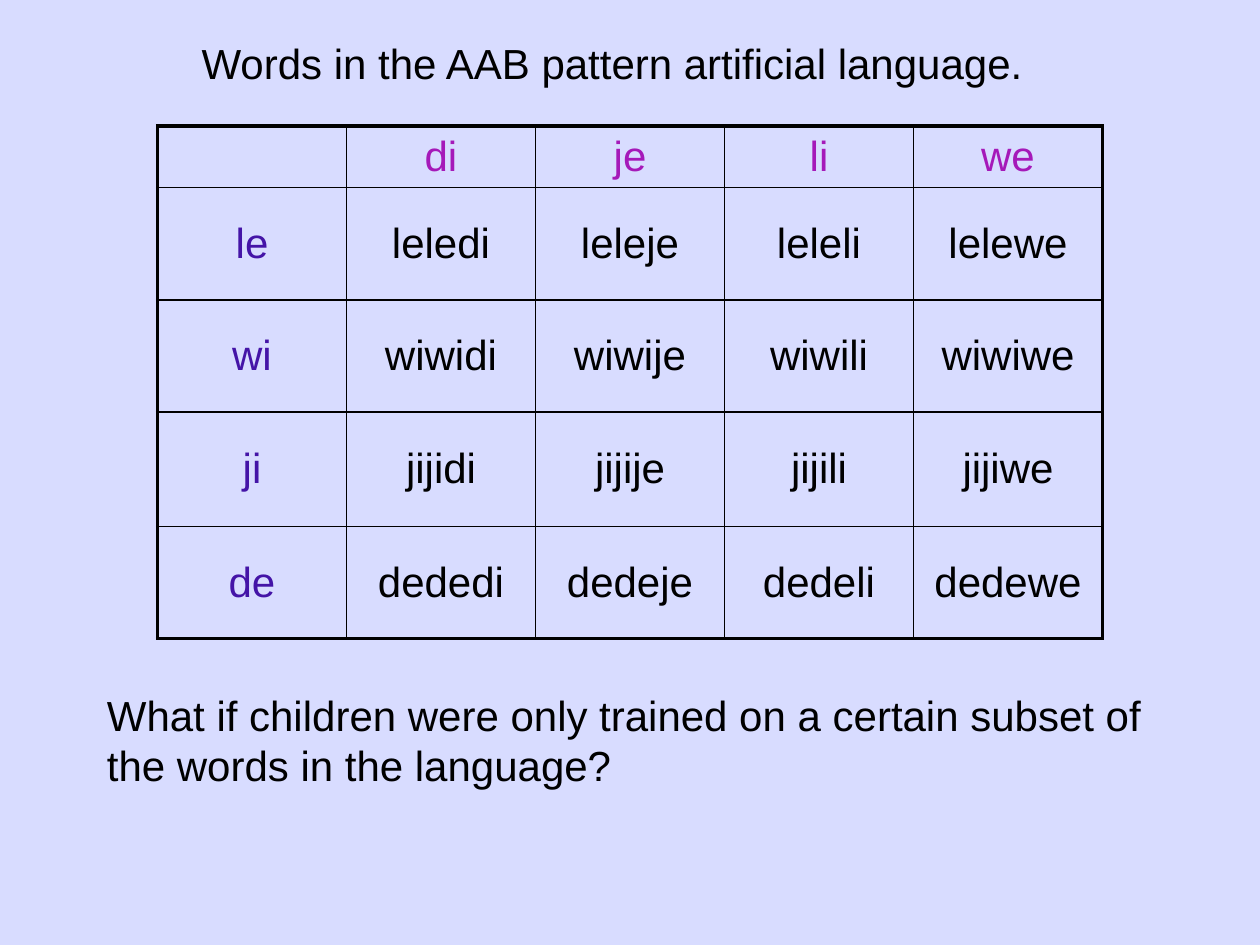
from lxml.etree import SubElement
from pptx import Presentation
from pptx.dml.color import RGBColor
from pptx.enum.text import MSO_ANCHOR as Anchor, MSO_AUTO_SIZE as AutoSize, PP_ALIGN as Align
from pptx.oxml.ns import qn
from pptx.util import Inches, Pt

TITLE = "Words in the AAB pattern artificial language."
QUESTION = ("What if children were only trained on a certain subset of "
            "the words in the language?")
A_SYLLABLES = ["le", "wi", "ji", "de"]
B_SYLLABLES = ["di", "je", "li", "we"]

BACKGROUND, BLACK, A_COLOR, B_COLOR = "D8DCFF", "000000", "4414A7", "A519B9"
COLUMN_WIDTH = 1.5
ROW_HEIGHTS = [0.49, 0.89, 0.89, 0.91, 0.89]
OUTER_LINE, INNER_LINE = 2.25, 1


def rgb(color):
    return RGBColor.from_string(color)


def style_text(frame, text, color=BLACK, align=Align.LEFT):
    para = frame.paragraphs[0]
    para.text = text
    para.alignment = align
    para.font.name = "Arial"
    para.font.size = Pt(24)
    para.font.color.rgb = rgb(color)


def place_text(box, text, left, top, width, height):
    box.left, box.top = Inches(left), Inches(top)
    box.width, box.height = Inches(width), Inches(height)
    frame = box.text_frame
    frame.word_wrap = True
    frame.auto_size = AutoSize.NONE
    frame.vertical_anchor = Anchor.TOP
    style_text(frame, text)


def add_border(cell, side, points):
    line = SubElement(cell._tc.get_or_add_tcPr(), qn(f"a:ln{side}"), w=str(Pt(points)))
    fill = SubElement(line, qn("a:solidFill"))
    SubElement(fill, qn("a:srgbClr"), val=BLACK)


def add_word_table(slide):
    rows = [[""] + B_SYLLABLES]
    rows += [[a] + [a + a + b for b in B_SYLLABLES] for a in A_SYLLABLES]
    last_row, last_column = len(rows) - 1, len(rows[0]) - 1
    table = slide.shapes.add_table(
        len(rows), len(rows[0]), Inches(1.25), Inches(1),
        Inches(COLUMN_WIDTH * len(rows[0])), Inches(sum(ROW_HEIGHTS))).table
    table.first_row = table.horz_banding = False
    for column in table.columns:
        column.width = Inches(COLUMN_WIDTH)
    for r, words in enumerate(rows):
        table.rows[r].height = Inches(ROW_HEIGHTS[r])
        for c, word in enumerate(words):
            cell = table.cell(r, c)
            cell.vertical_anchor = Anchor.MIDDLE
            color = B_COLOR if r == 0 else A_COLOR if c == 0 else BLACK
            style_text(cell.text_frame, word, color, Align.CENTER)
            at_edge = {"L": c == 0, "R": c == last_column,
                       "T": r == 0, "B": r == last_row}
            for side, outer in at_edge.items():
                add_border(cell, side, OUTER_LINE if outer else INNER_LINE)
            cell.fill.background()


def main():
    deck = Presentation()
    deck.slide_width, deck.slide_height = Inches(10), Inches(7.5)
    slide = deck.slides.add_slide(deck.slide_layouts.get_by_name("Title Only"))
    slide.background.fill.solid()
    slide.background.fill.fore_color.rgb = rgb(BACKGROUND)

    place_text(slide.shapes.title, TITLE, 1.5, 0.25, 6.92, 0.5)
    add_word_table(slide)
    question = slide.shapes.add_textbox(0, 0, 0, 0)
    place_text(question, QUESTION, 0.75, 5.42, 8.92, 0.9)
    deck.save("out.pptx")


if __name__ == "__main__":
    main()
